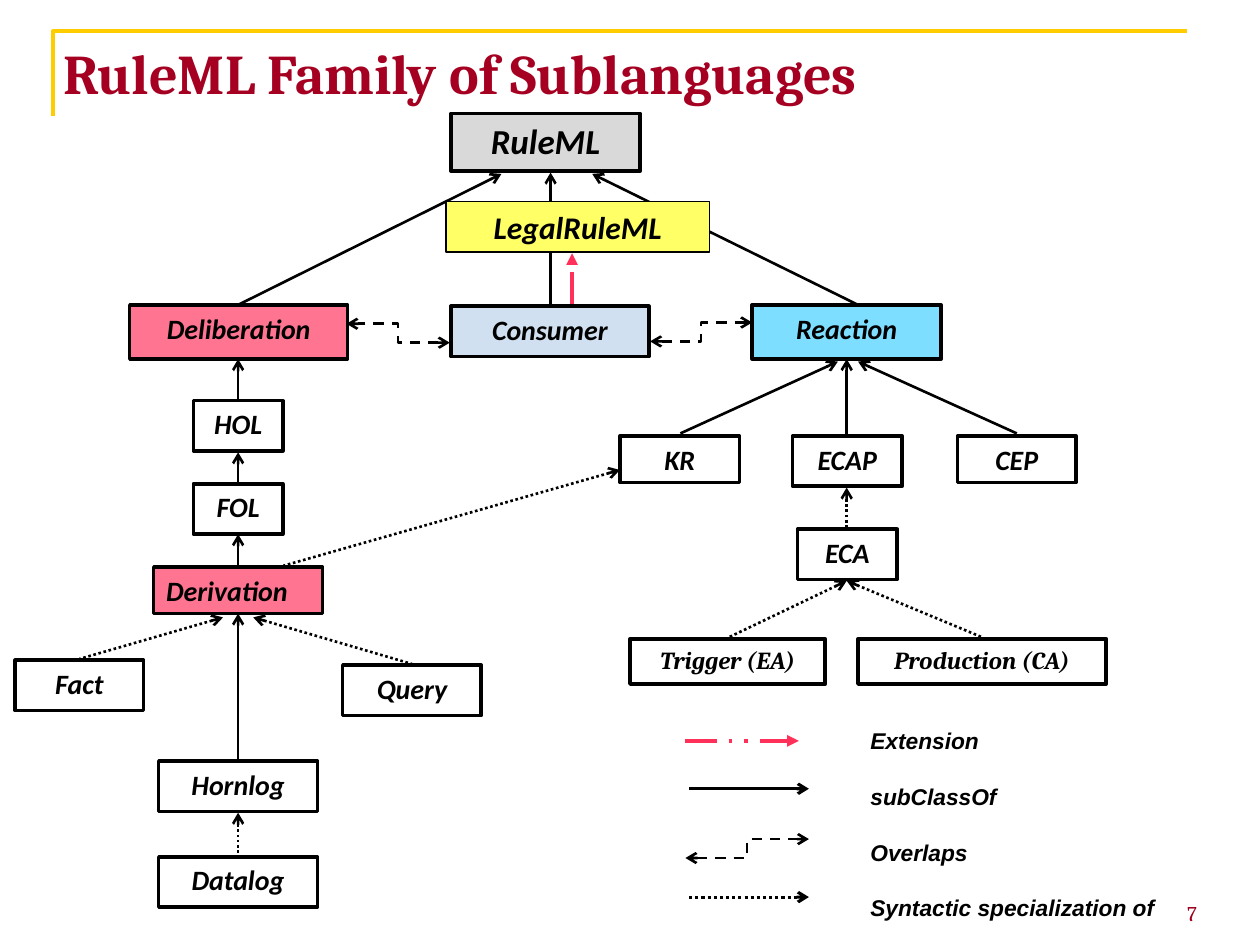
from dataclasses import dataclass
from typing import Any

from lxml import etree
from pptx import Presentation
from pptx.dml.color import RGBColor
from pptx.enum import dml, shapes, text
from pptx.oxml import ns
from pptx.util import Inches, Pt

BLACK = RGBColor(0x00, 0x00, 0x00)
WHITE = RGBColor(0xFF, 0xFF, 0xFF)
GOLD = RGBColor(0xFF, 0xCC, 0x00)
CRIMSON = RGBColor(0xA5, 0x00, 0x21)
DARK_RED = RGBColor(0x9D, 0x00, 0x1F)
EXTENSION_RED = RGBColor(0xFF, 0x30, 0x59)
GRAY = RGBColor(0xD9, 0xD9, 0xD9)
PINK = RGBColor(0xFF, 0x75, 0x91)
SKY = RGBColor(0x7D, 0xDE, 0xFF)
PALE_BLUE = RGBColor(0xD1, 0xE0, 0xF0)
YELLOW = RGBColor(0xFF, 0xFF, 0x66)

DOTTED = dml.MSO_LINE.ROUND_DOT
DASHED = dml.MSO_LINE.DASH
DASH_DOT_DOT = dml.MSO_LINE.DASH_DOT_DOT
CENTER = text.PP_ALIGN.CENTER
LEFT = text.PP_ALIGN.LEFT
RIGHT = text.PP_ALIGN.RIGHT


@dataclass
class Region:
    """A part of the slide whose contents are placed from its top left corner."""
    slide: Any
    left: float
    top: float

    def place(self, x, y):
        """Return the slide position of a point in the region."""
        return Inches(self.left + x), Inches(self.top + y)


def write_text(shape, *lines, size=16, font="Calibri", color=BLACK, bold=True,
               italic=True, align=CENTER, anchor=text.MSO_ANCHOR.TOP,
               margins=(0.1, 0.05, 0.1, 0.05), space_after=0):
    """Fill a shape with one formatted paragraph per line."""
    frame = shape.text_frame
    frame.word_wrap = True
    frame.auto_size = text.MSO_AUTO_SIZE.NONE
    frame.vertical_anchor = anchor
    (frame.margin_left, frame.margin_top,
     frame.margin_right, frame.margin_bottom) = map(Inches, margins)
    for index, line in enumerate(lines):
        paragraph = frame.add_paragraph() if index else frame.paragraphs[0]
        paragraph.alignment = align
        paragraph.space_before = Pt(0)
        paragraph.space_after = Pt(space_after)
        run = paragraph.add_run()
        run.text = line
        run.font.size = Pt(size)
        run.font.name = font
        run.font.bold = bold
        run.font.italic = italic
        run.font.color.rgb = color


def add_node(region, label, x, y, width, height, fill=WHITE, outline=2, **text_format):
    """Draw a labelled language box."""
    node = region.slide.shapes.add_shape(
        shapes.MSO_SHAPE.RECTANGLE, *region.place(x, y), Inches(width), Inches(height))
    node.shadow.inherit = False
    node.fill.solid()
    node.fill.fore_color.rgb = fill
    node.line.color.rgb = BLACK
    node.line.width = Pt(outline)
    write_text(node, label, **text_format)


def add_arrow(region, start, end, head="arrow", tail=None, color=BLACK, width=1.5,
              dash=None, kind=shapes.MSO_CONNECTOR.STRAIGHT):
    """Draw a connector with the given arrowheads at its start and end."""
    arrow = region.slide.shapes.add_connector(
        kind, *region.place(*start), *region.place(*end))
    arrow.line.color.rgb = color
    arrow.line.width = Pt(width)
    if dash is not None:
        arrow.line.dash_style = dash
    properties = arrow._element.spPr
    outline = properties.find(ns.qn("a:ln"))
    for tag, style in (("a:headEnd", head), ("a:tailEnd", tail)):
        if style:
            etree.SubElement(outline, ns.qn(tag), type=style)
    etree.SubElement(properties, ns.qn("a:effectLst"))


def add_extension(region, start, end):
    """Draw a red extension arrow."""
    add_arrow(region, start, end, head=None, tail="triangle",
              color=EXTENSION_RED, width=2.25, dash=DASH_DOT_DOT)


def add_overlap(region, start, end):
    """Draw a dashed two-way elbow arrow."""
    add_arrow(region, start, end, tail="arrow", dash=DASHED,
              kind=shapes.MSO_CONNECTOR.ELBOW)


def draw_header(region):
    """Draw the corner rule and the title."""
    builder = region.slide.shapes.build_freeform(*region.place(0, 0.67))
    builder.add_line_segments([region.place(0, 0), region.place(9, 0)], close=False)
    corner = builder.convert_to_shape()
    corner.shadow.inherit = False
    corner.fill.background()
    corner.line.color.rgb = GOLD
    corner.line.width = Pt(2.25)
    title = region.slide.shapes.title
    title.left, title.top = region.place(0.08, 0.25)
    title.width, title.height = Inches(9.42), Inches(0.34)
    write_text(title, "RuleML Family of Sublanguages", size=32, font="Cambria",
               color=CRIMSON, italic=False, align=LEFT,
               anchor=text.MSO_ANCHOR.BOTTOM, margins=(0, 0.05, 0, 0))


def draw_families(region):
    """Draw the root language and its main families."""
    for start, end in (((3.37, 0.47), (3.37, 1.52)), ((2.98, 0.48), (0.89, 1.52)),
                       ((3.7, 0.48), (5.81, 1.52))):
        add_arrow(region, start, end)
    add_node(region, "RuleML", 2.58, 0, 1.5, 0.46, fill=GRAY, size=20)
    add_node(region, "LegalRuleML", 2.54, 0.7, 2.09, 0.4, fill=YELLOW,
             outline=0.75, size=18)
    add_node(region, "Deliberation", 0.03, 1.52, 1.73, 0.43, fill=PINK)
    add_node(region, "Consumer", 2.58, 1.53, 1.57, 0.4, fill=PALE_BLUE)
    add_node(region, "Reaction", 4.97, 1.52, 1.5, 0.43, fill=SKY)
    add_extension(region, (3.54, 1.51), (3.54, 1.11))
    add_overlap(region, (4.16, 1.81), (4.97, 1.66))
    add_overlap(region, (2.57, 1.82), (1.75, 1.67))


def draw_deliberation(region):
    """Draw the languages below Deliberation."""
    spine = 1.77
    for top, bottom in ((0, 0.33), (0.74, 0.98), (1.39, 1.65), (2.02, 3.19)):
        add_arrow(region, (spine, top), (spine, bottom))
    for start, end in (((spine, 3.6), (spine, 3.94)), ((1.65, 2.05), (0.51, 2.38)),
                       ((1.89, 2.05), (3.15, 2.42)), ((4.8, 0.88), (2.13, 1.64))):
        add_arrow(region, start, end, dash=DOTTED)
    for label, y, width in (("HOL", 0.33, 0.71), ("FOL", 0.99, 0.71),
                            ("Hornlog", 3.19, 1.26), ("Datalog", 3.95, 1.26)):
        add_node(region, label, spine - width / 2, y, width, 0.4)
    add_node(region, "Derivation", 1.1, 1.65, 1.34, 0.37, fill=PINK, align=LEFT)
    add_node(region, "Fact", 0, 2.39, 1.02, 0.4)
    add_node(region, "Query", 2.6, 2.43, 1.1, 0.4)


def draw_reaction(region):
    """Draw the languages below Reaction."""
    spine = 1.8
    for start, end in (((1.73, 0.02), (0.48, 0.59)), ((spine, 0), (spine, 0.61)),
                       ((1.89, 0.02), (3.15, 0.59))):
        add_arrow(region, start, end)
    for start, end in (((spine, 1.02), (spine, 1.33)), ((spine, 1.76), (0.86, 2.21)),
                       ((spine, 1.76), (2.88, 2.21))):
        add_arrow(region, start, end, dash=DOTTED)
    add_node(region, "KR", 0, 0.61, 0.95, 0.37)
    add_node(region, "ECAP", 1.37, 0.61, 0.87, 0.4)
    add_node(region, "CEP", 2.68, 0.61, 0.94, 0.37)
    add_node(region, "ECA", 1.41, 1.35, 0.79, 0.4)
    for label, x, width in (("Trigger (EA)", 0.08, 1.55), ("Production (CA)", 1.89, 1.97)):
        add_node(region, label, x, 2.22, width, 0.36, size=14, font="Cambria")


def draw_legend(region):
    """Draw a sample of each arrow with its meaning."""
    add_extension(region, (0, 0.16), (0.9, 0.16))
    add_arrow(region, (0.03, 0.54), (0.98, 0.54), head=None, tail="arrow", width=1.75)
    add_overlap(region, (0, 1.09), (0.98, 0.94))
    add_arrow(region, (0.03, 1.4), (0.98, 1.4), head=None, tail="arrow",
              width=1.75, dash=DOTTED)
    labels = region.slide.shapes.add_textbox(
        *region.place(1.37, 0), Inches(2.63), Inches(1.63))
    write_text(labels, "Extension", "subClassOf", "Overlaps",
               "Syntactic specialization of", size=13, font="Arial",
               align=LEFT, space_after=16.25)


def draw_page_number(region):
    """Write the page number."""
    number = region.slide.shapes.add_textbox(
        *region.place(0, 0), Inches(0.83), Inches(0.4))
    write_text(number, "7", size=12, font="Cambria", color=DARK_RED, bold=False,
               italic=False, align=RIGHT, anchor=text.MSO_ANCHOR.BOTTOM,
               margins=(0, 0, 0, 0))


def main():
    """Build and save the slide."""
    presentation = Presentation()
    presentation.slide_width, presentation.slide_height = Inches(10), Inches(7.5)
    slide = presentation.slides.add_slide(presentation.slide_layouts[5])
    draw_header(Region(slide, 0.42, 0.25))
    draw_families(Region(slide, 1, 0.9))
    draw_deliberation(Region(slide, 0.12, 2.85))
    draw_reaction(Region(slide, 4.92, 2.85))
    draw_legend(Region(slide, 5.44, 5.72))
    draw_page_number(Region(slide, 8.67, 6.95))
    presentation.save("out.pptx")


if __name__ == "__main__":
    main()
